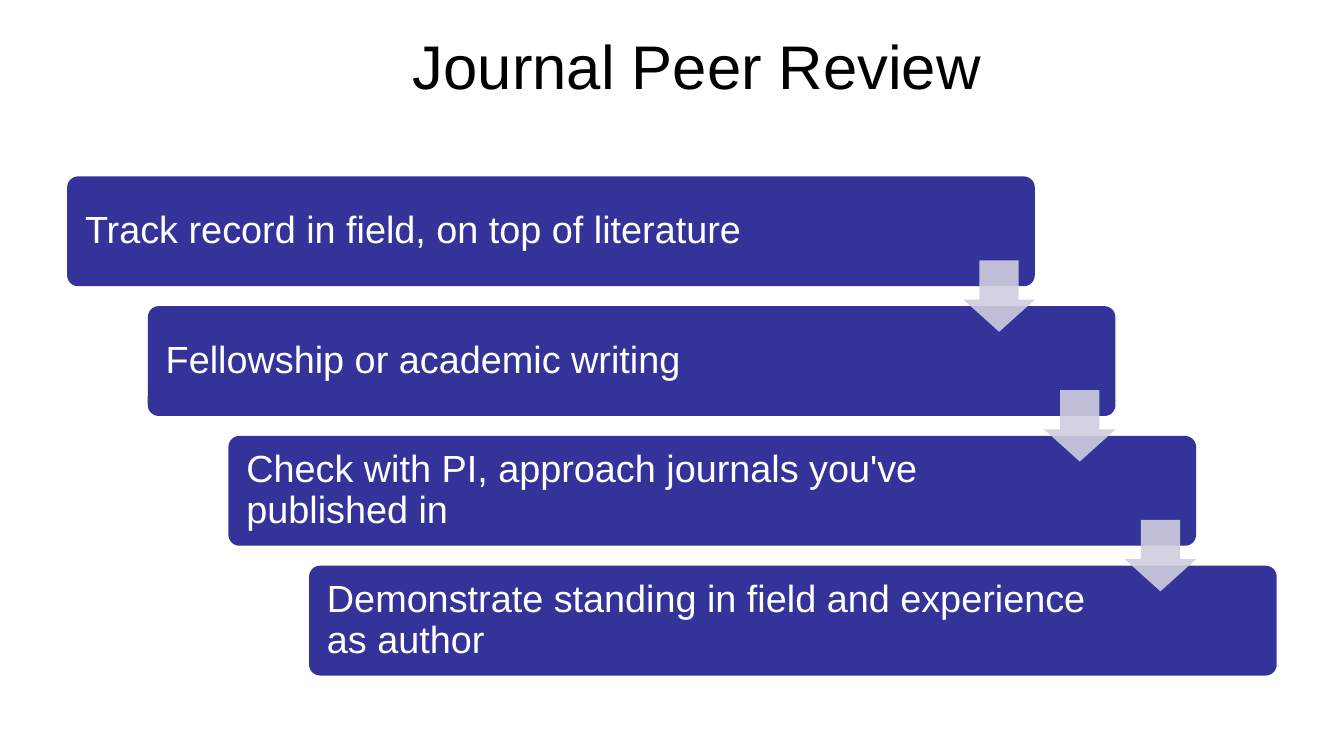
from lxml import etree
from pptx import Presentation
from pptx.dml.color import RGBColor
from pptx.enum.shapes import MSO_SHAPE
from pptx.enum.text import MSO_ANCHOR, PP_ALIGN
from pptx.oxml.ns import qn
from pptx.util import Pt

ROUNDED = MSO_SHAPE.ROUNDED_RECTANGLE
DOWN_ARROW = MSO_SHAPE.DOWN_ARROW
MIDDLE = MSO_ANCHOR.MIDDLE
LEFT = PP_ALIGN.LEFT
CENTER = PP_ALIGN.CENTER

INDIGO = "333399"
LAVENDER = "CECEDE"
WHITE = "FFFFFF"
BLACK = "000000"

REVIEW_STEPS = [
    "Track record in field, on top of literature",
    "Fellowship or academic writing",
    "Check with PI, approach journals you've published in",
    "Demonstrate standing in field and experience as author",
]


def colour(hex_code):
    return RGBColor.from_string(hex_code)


def write(frame, text, size, ink, align=LEFT, spacing=1.0):
    frame.word_wrap = True
    frame.vertical_anchor = MIDDLE
    paragraph = frame.paragraphs[0]
    paragraph.alignment = align
    paragraph.line_spacing = spacing
    run = paragraph.add_run()
    run.text = text
    run.font.name = "Arial"
    run.font.size = Pt(size)
    run.font.color.rgb = colour(ink)


def add_filled(slide, preset, box, fill, adjustments, opacity=100):
    shape = slide.shapes.add_shape(preset, *map(Pt, box))
    shape.shadow.inherit = False
    shape.line.fill.background()
    shape.fill.solid()
    shape.fill.fore_color.rgb = colour(fill)
    for index, value in enumerate(adjustments):
        shape.adjustments[index] = value
    if opacity < 100:
        tint = shape._element.spPr.find(qn("a:solidFill"))[0]
        etree.SubElement(tint, qn("a:alpha"), val=str(opacity * 1000))
    return shape


def add_title(slide, box, text):
    title = slide.shapes.title
    title.left, title.top, title.width, title.height = map(Pt, box)
    write(title.text_frame, text, size=44, ink=BLACK, align=CENTER)


def add_staircase(slide, box, steps):
    left, top, width, height = box
    step_width, step_height = width * 0.8, height * 0.22
    shift = (width - step_width) / (len(steps) - 1)
    drop = (height - step_height) / (len(steps) - 1)
    arrow_size = step_height * 0.65

    for index, text in enumerate(steps):
        place = (left + index * shift, top + index * drop, step_width, step_height)
        step = add_filled(slide, ROUNDED, place, INDIGO, [0.1])
        frame = step.text_frame
        frame.margin_left, frame.margin_right = Pt(10.5), Pt(119)
        write(frame, text, size=27, ink=WHITE, spacing=0.9)

    for index in range(len(steps) - 1):
        arrow_left = left + index * shift + step_width - arrow_size
        gap_middle = top + index * drop + (step_height + drop) / 2
        place = (arrow_left, gap_middle - arrow_size / 2, arrow_size, arrow_size)
        add_filled(slide, DOWN_ARROW, place, LAVENDER, [0.55, 0.45], opacity=90)


def main():
    deck = Presentation()
    deck.slide_width, deck.slide_height = Pt(960), Pt(540)
    slide = deck.slides.add_slide(deck.slide_layouts[5])
    add_title(slide, (66, 1, 864, 90), "Journal Peer Review")
    add_staircase(slide, (48, 126, 864, 356.5), REVIEW_STEPS)
    deck.save("out.pptx")


if __name__ == "__main__":
    main()
